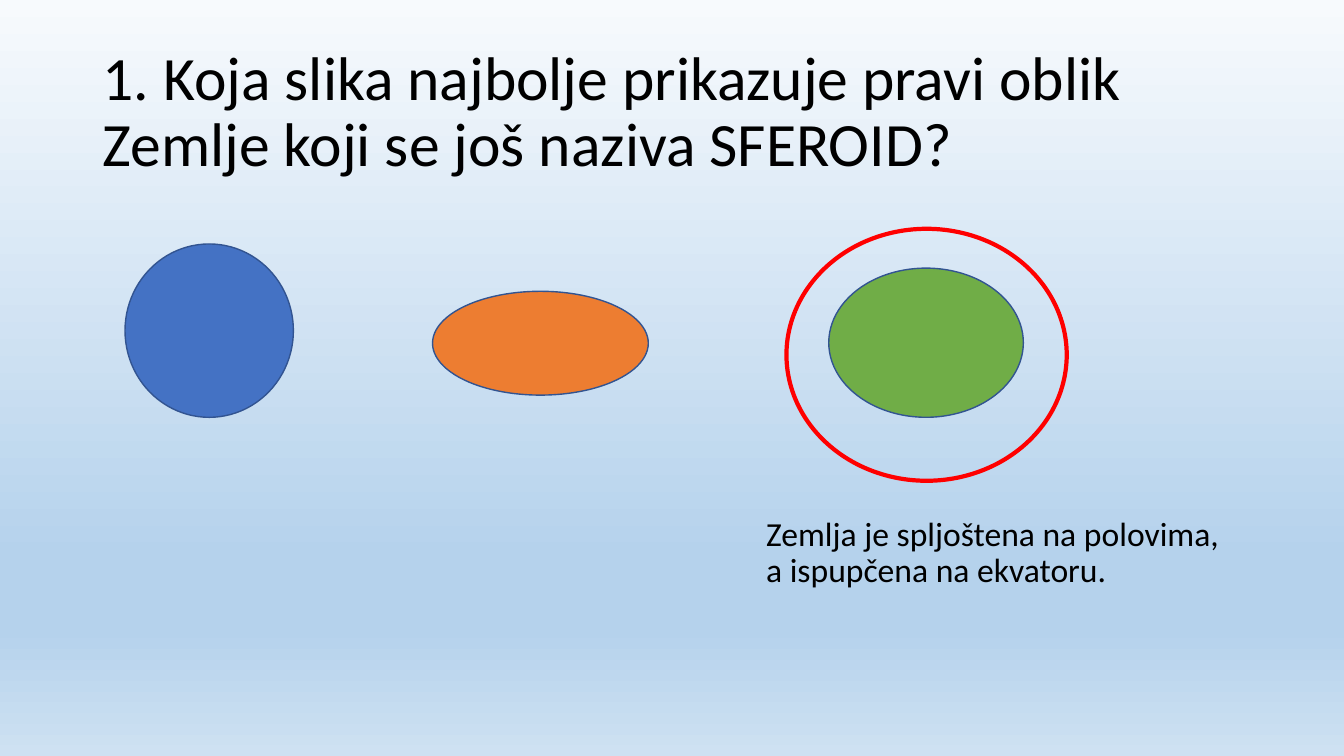
import copy

import pptx
import pptx.dml.color
import pptx.enum.shapes
import pptx.enum.text
import pptx.util

Inches = pptx.util.Inches
Pt = pptx.util.Pt


def color(hex_value):
    return pptx.dml.color.RGBColor.from_string(hex_value)


def add_text(slide, text, left, top, width, height, size, font="Calibri", ink="000000"):
    frame = slide.shapes.add_textbox(
        Inches(left), Inches(top), Inches(width), Inches(height)).text_frame
    frame.word_wrap = True
    frame.vertical_anchor = pptx.enum.text.MSO_ANCHOR.MIDDLE
    frame.text = text
    for paragraph in frame.paragraphs:
        paragraph.line_spacing = 0.9
        paragraph.font.size = Pt(size)
        paragraph.font.name = font
        paragraph.font.color.rgb = color(ink)


presentation = pptx.Presentation()
presentation.slide_width = Inches(13.33)
presentation.slide_height = Inches(7.5)
slide = presentation.slides.add_slide(presentation.slide_layouts[6])

# Sky gradient from top to bottom, extended from two stops to four
sky = slide.background.fill
sky.gradient()
sky.gradient_angle = 270
stop_list = slide.element.xpath(".//a:gsLst")[0]
for stop in list(stop_list):
    stop_list.append(copy.deepcopy(stop))
sky_stops = [(0, "F7FAFD"), (0.74, "B5D2EC"), (0.83, "B5D2EC"), (1, "CEE1F2")]
for stop, (position, shade) in zip(sky.gradient_stops, sky_stops):
    stop.position = position
    stop.color.rgb = color(shade)

# Question
add_text(slide, "1. Koja slika najbolje prikazuje pravi oblik Zemlje koji se još naziva SFEROID?",
         0.92, 0.4, 11.5, 1.45, size=44)

# Three candidate Earth shapes, then the ring around the right answer
ellipses = [
    (1.24, 2.42, 1.67, 1.72, "4472C4", "325491", 1),
    (4.29, 2.89, 2.14, 1.03, "ED7D31", "325491", 1),
    (8.22, 2.66, 1.93, 1.48, "70AD47", "325491", 1),
    (7.8, 2.27, 2.78, 2.5, None, "FF0000", 3),
]
for left, top, width, height, fill, outline, weight in ellipses:
    ellipse = slide.shapes.add_shape(
        pptx.enum.shapes.MSO_SHAPE.OVAL,
        Inches(left), Inches(top), Inches(width), Inches(height))
    ellipse.shadow.inherit = False
    if fill:
        ellipse.fill.solid()
        ellipse.fill.fore_color.rgb = color(fill)
    else:
        ellipse.fill.background()
    ellipse.line.color.rgb = color(outline)
    ellipse.line.width = Pt(weight)

# Explanation of the answer
add_text(slide, "Zemlja je spljoštena na polovima,\na ispupčena na ekvatoru.",
         7.5, 4.77, 7.95, 1.45, size=24)

presentation.save("out.pptx")
